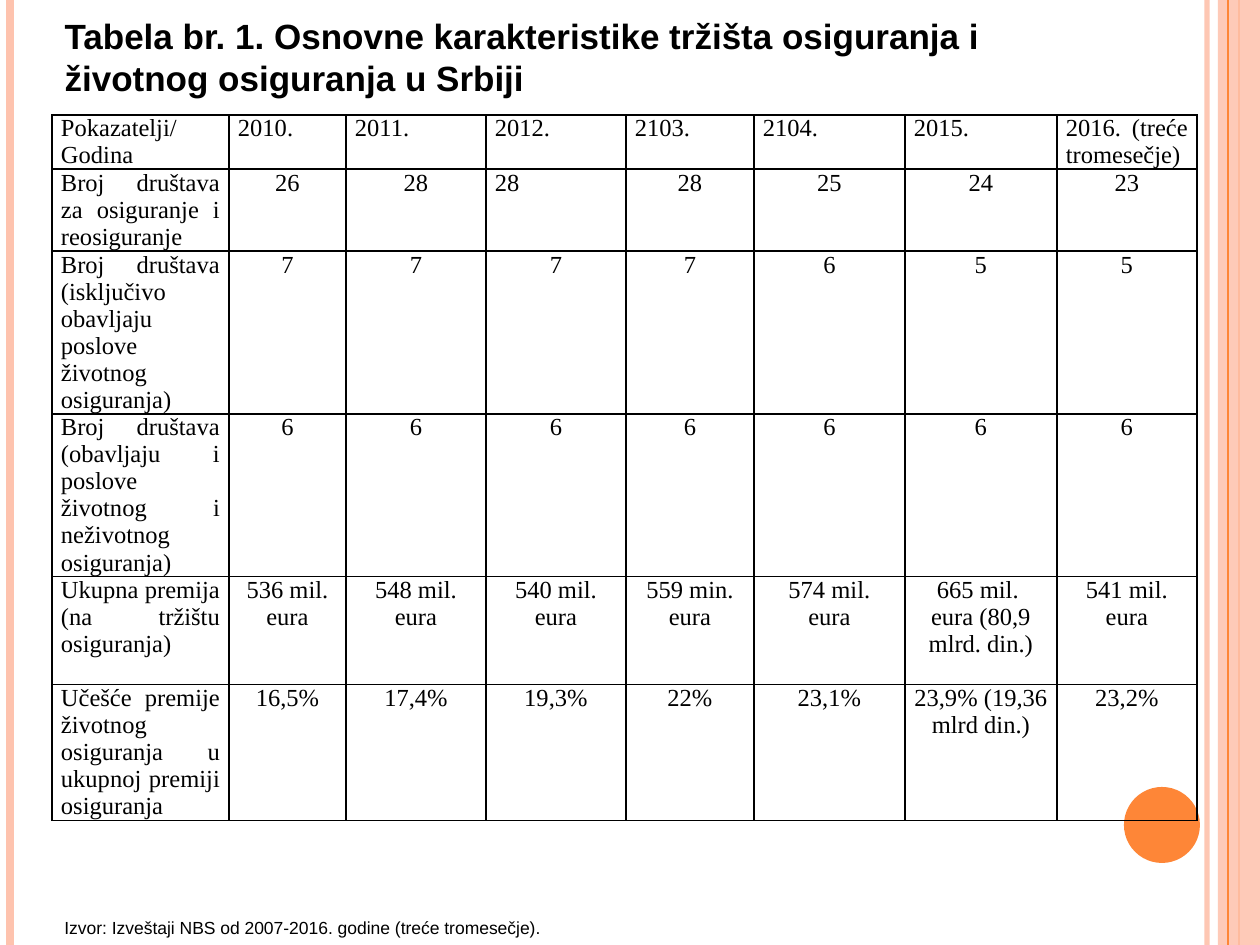
from pptx import Presentation
from pptx.dml.color import RGBColor
from pptx.enum.shapes import MSO_CONNECTOR, MSO_SHAPE
from pptx.enum.text import MSO_ANCHOR, MSO_AUTO_SIZE, PP_ALIGN
from pptx.oxml.ns import qn
from pptx.util import Emu, Pt
from lxml.etree import SubElement

WIDE, HIGH = 1260, 945
PEACH, ORANGE, BLACK = "FEC3AE", "FE8637", "000000"
LEFT, MID, JUST = PP_ALIGN.LEFT, PP_ALIGN.CENTER, PP_ALIGN.JUSTIFY

TITLE = "Tabela br. 1. Osnovne karakteristike tržišta osiguranja i životnog osiguranja u Srbiji"
SOURCE = "Izvor: Izveštaji NBS od 2007-2016. godine (treće tromesečje)."
COLS = [177, 117, 140, 140, 128, 151, 152, 140]
ROWS = [54, 82, 162, 163, 108, 136]
DATA = [
    ["Pokazatelji/Godina", "2010.", "2011.", "2012.", "2103.", "2104.", "2015.",
     "2016. (treće tromesečje)"],
    ["Broj društava za osiguranje i reosiguranje",
     "26", "28", "28", "28", "25", "24", "23"],
    ["Broj društava (isključivo obavljaju poslove životnog osiguranja)",
     "7", "7", "7", "7", "6", "5", "5"],
    ["Broj društava (obavljaju i poslove životnog i neživotnog osiguranja)",
     "6", "6", "6", "6", "6", "6", "6"],
    ["Ukupna premija (na tržištu osiguranja)",
     "536 mil. eura", "548 mil.\neura", "540 mil.\neura", "559 min.\neura",
     "574 mil.\neura", "665 mil. \neura (80,9 mlrd. din.)", "541 mil.\neura"],
    ["Učešće premije životnog osiguranja u ukupnoj premiji osiguranja",
     "16,5%", "17,4%", "19,3%", "22%", "23,1%", "23,9% (19,36 mlrd din.)", "23,2%"],
]


def px(n):
    return Emu(round(n * 914400 / 126))


def paint(item, color, alpha=100):
    """Give a line's or shape's fill one solid colour, alpha in percent."""
    item.solid()
    item.fore_color.rgb = RGBColor.from_string(color)
    if alpha < 100:
        node = next(item._xPr.iter(qn("a:srgbClr")))
        SubElement(node, qn("a:alpha")).set("val", str(alpha * 1000))


def write(frame, text, size=14, font="Times New Roman", bold=False, align=LEFT,
          anchor=MSO_ANCHOR.TOP):
    frame.word_wrap = True
    frame.vertical_anchor = anchor
    frame.text = text
    for para in frame.paragraphs:
        para.alignment = align
        for run in para.runs:
            run.font.name = font
            run.font.size = Pt(size)
            run.font.bold = bold
            run.font.color.rgb = RGBColor.from_string(BLACK)


def stripe(slide, x, color, width, alpha=100):
    line = slide.shapes.add_connector(MSO_CONNECTOR.STRAIGHT, px(x), 0, px(x), px(HIGH))
    line.line.width = Pt(width)
    paint(line.line.fill, color, alpha)
    SubElement(line._element.spPr, qn("a:effectLst"))


def block(slide, kind, x, y, w, h, color, alpha=100):
    shape = slide.shapes.add_shape(kind, px(x), px(y), px(w), px(h))
    shape.shadow.inherit = False
    shape.line.fill.background()
    paint(shape.fill, color, alpha)


def decor(slide):
    stripe(slide, 1207, PEACH, 3, 93)
    stripe(slide, 10, PEACH, 4.5)
    stripe(slide, 1239, ORANGE, 1.5)
    block(slide, MSO_SHAPE.RECTANGLE, 1218, 0, 42, HIGH, PEACH, 87)
    stripe(slide, 1228, ORANGE, 0.75)
    block(slide, MSO_SHAPE.OVAL, 1124, 787, 76, 76, ORANGE)


def head(slide, x, y, w, h):
    title = slide.shapes.title
    title.left, title.top, title.width, title.height = map(px, (x, y, w, h))
    write(title.text_frame, TITLE, size=20, font="Arial", bold=True,
          anchor=MSO_ANCHOR.BOTTOM)
    title.text_frame.auto_size = MSO_AUTO_SIZE.NONE


def border(cell):
    props = cell._tc.get_or_add_tcPr()
    for at, side in enumerate(("lnL", "lnR", "lnT", "lnB")):
        line = props.makeelement(qn(f"a:{side}"), {"w": str(Pt(1))})
        fill = SubElement(line, qn("a:solidFill"))
        SubElement(fill, qn("a:srgbClr")).set("val", BLACK)
        props.insert(at, line)


def grid(slide, x, y):
    frame = slide.shapes.add_table(len(ROWS), len(COLS), px(x), px(y),
                                   px(sum(COLS)), px(sum(ROWS)))
    table = frame.table
    table.first_row = table.horz_banding = False
    for col, w in zip(table.columns, COLS):
        col.width = px(w)
    for r, (row, h) in enumerate(zip(table.rows, ROWS)):
        row.height = px(h)
        for c, cell in enumerate(row.cells):
            cell.margin_left = cell.margin_right = px(9)
            cell.margin_top = cell.margin_bottom = 0
            cell.fill.background()
            border(cell)
            # The 2012 company count is set like the labels
            label = r == 0 or c == 0 or (r, c) == (1, 3)
            write(cell.text_frame, DATA[r][c], align=JUST if label else MID)


def foot(slide, x, y, w, h):
    box = slide.shapes.add_textbox(px(x), px(y), px(w), px(h))
    write(box.text_frame, SOURCE, size=10, font="Arial", anchor=MSO_ANCHOR.MIDDLE)


def main():
    deck = Presentation()
    deck.slide_width, deck.slide_height = px(WIDE), px(HIGH)
    slide = deck.slides.add_slide(deck.slide_layouts[5])
    decor(slide)
    head(slide, 52, -53, 1030, 158)
    grid(slide, 52, 115)
    foot(slide, 52, 911, 1150, 32)
    deck.save("out.pptx")


if __name__ == "__main__":
    main()
